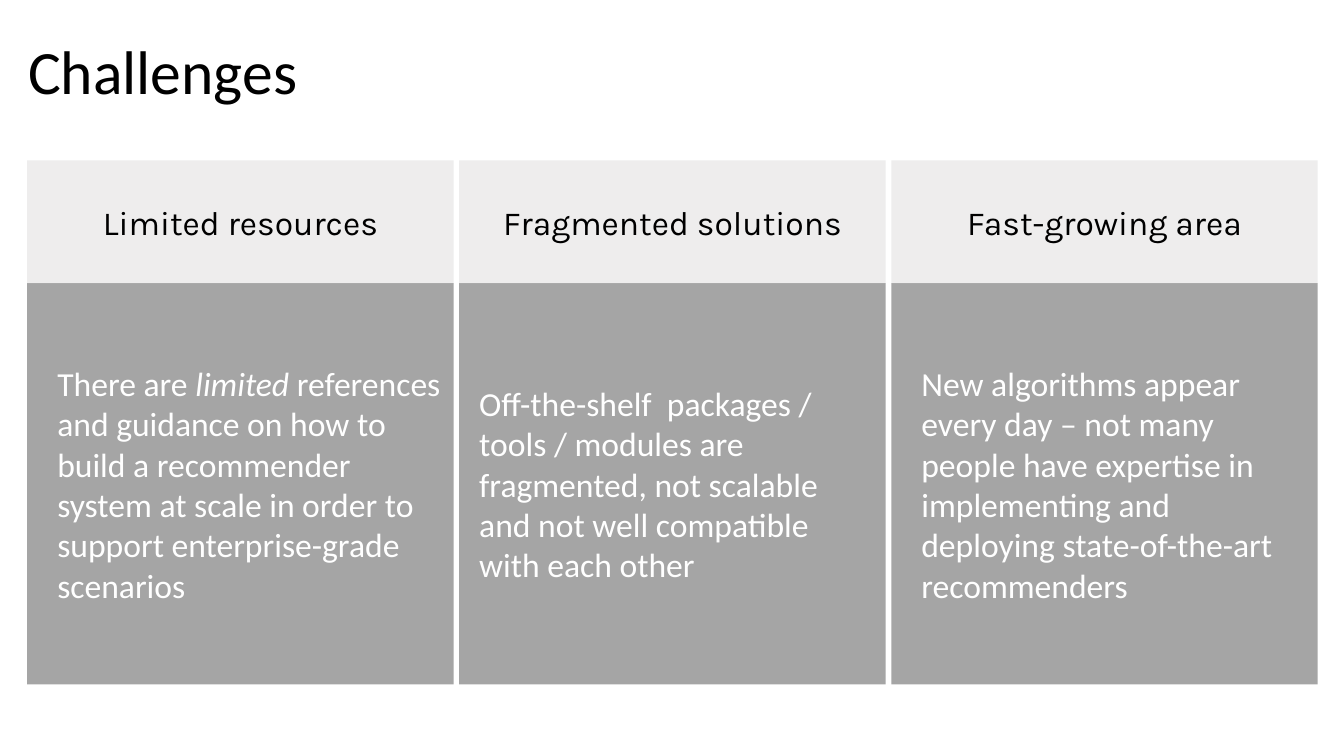
from dataclasses import dataclass

from lxml.etree import SubElement
from pptx import Presentation
from pptx.dml.color import RGBColor
from pptx.enum.shapes import MSO_SHAPE
from pptx.enum.text import MSO_ANCHOR, PP_ALIGN
from pptx.oxml.ns import qn
from pptx.util import Inches, Pt


@dataclass(frozen=True)
class Theme:
    black: str = "000000"
    white: str = "FFFFFF"
    header_fill: str = "E7E6E6"
    header_opacity: int = 70
    body_fill: str = "A5A5A5"
    body_font: str = "Calibri"
    header_font: str = "Karla"
    title_size: int = 44
    text_size: int = 24


THEME = Theme()

LEFT, RIGHT, COLUMN_WIDTH = 0.27, 13.07, 4.23
HEADER_TOP, HEADER_HEIGHT, BODY_HEIGHT = 1.59, 1.22, 3.98

CHALLENGES = [
    ("Limited resources", 0.2, [
        ("There are ", False),
        ("limited", True),
        (" references and guidance on how to build a recommender system at scale"
         " in order to support enterprise-grade scenarios", False),
    ]),
    ("Fragmented solutions", 0.1, [
        ("Off-the-shelf  packages / tools / modules are fragmented, not scalable"
         " and not well compatible with each other", False),
    ]),
    ("Fast-growing area", 0.2, [
        ("New algorithms appear every day – not many people have expertise in"
         " implementing and deploying state-of-the-art recommenders", False),
    ]),
]


def add_span(para, text, font, size, color, italic=False):
    span = para.add_run()
    span.text = text
    span.font.name = font
    span.font.size = Pt(size)
    span.font.italic = italic
    span.font.color.rgb = RGBColor.from_string(color)


def prepare_frame(shape):
    frame = shape.text_frame
    frame.word_wrap = True
    frame.vertical_anchor = MSO_ANCHOR.MIDDLE
    frame.margin_left = frame.margin_right = Inches(0.1)
    return frame


def add_title(page, text):
    box = page.shapes.add_textbox(Inches(0.18), Inches(0.15), Inches(12.99), Inches(1.17))
    para = prepare_frame(box).paragraphs[0]
    para.line_spacing = 0.9
    add_span(para, text, THEME.body_font, THEME.title_size, THEME.black)


def add_panel(page, left, top, height, color, opacity=100):
    panel = page.shapes.add_shape(
        MSO_SHAPE.RECTANGLE, Inches(left), Inches(top), Inches(COLUMN_WIDTH), Inches(height))
    panel.shadow.inherit = False
    panel.line.fill.background()
    panel.fill.solid()
    panel.fill.fore_color.rgb = RGBColor.from_string(color)
    if opacity < 100:
        swatch = panel.fill._xPr.find(qn("a:solidFill")).find(qn("a:srgbClr"))
        SubElement(swatch, qn("a:alpha")).set("val", str(opacity * 1000))
    frame = prepare_frame(panel)
    frame.margin_top = frame.margin_bottom = Inches(0.1)
    return frame.paragraphs[0]


def add_header(page, left, text):
    para = add_panel(page, left, HEADER_TOP, HEADER_HEIGHT,
                     THEME.header_fill, THEME.header_opacity)
    para.alignment = PP_ALIGN.CENTER
    para.space_after = Pt(12)
    add_span(para, text, THEME.header_font, THEME.text_size, THEME.black)


def add_body(page, left, indent, spans):
    para = add_panel(page, left, HEADER_TOP + HEADER_HEIGHT, BODY_HEIGHT, THEME.body_fill)
    para.alignment = PP_ALIGN.LEFT
    properties = para._p.get_or_add_pPr()
    properties.set("marL", str(Inches(indent)))
    properties.set("indent", "0")
    for text, italic in spans:
        add_span(para, text, THEME.body_font, THEME.text_size, THEME.white, italic)


def main():
    deck = Presentation()
    deck.slide_width, deck.slide_height = Inches(13.33), Inches(7.5)
    page = deck.slides.add_slide(deck.slide_layouts[6])
    add_title(page, "Challenges")
    pitch = (RIGHT - LEFT - COLUMN_WIDTH) / (len(CHALLENGES) - 1)
    for column, (heading, indent, spans) in enumerate(CHALLENGES):
        left = LEFT + column * pitch
        add_body(page, left, indent, spans)
        add_header(page, left, heading)
    deck.save("out.pptx")


if __name__ == "__main__":
    main()
